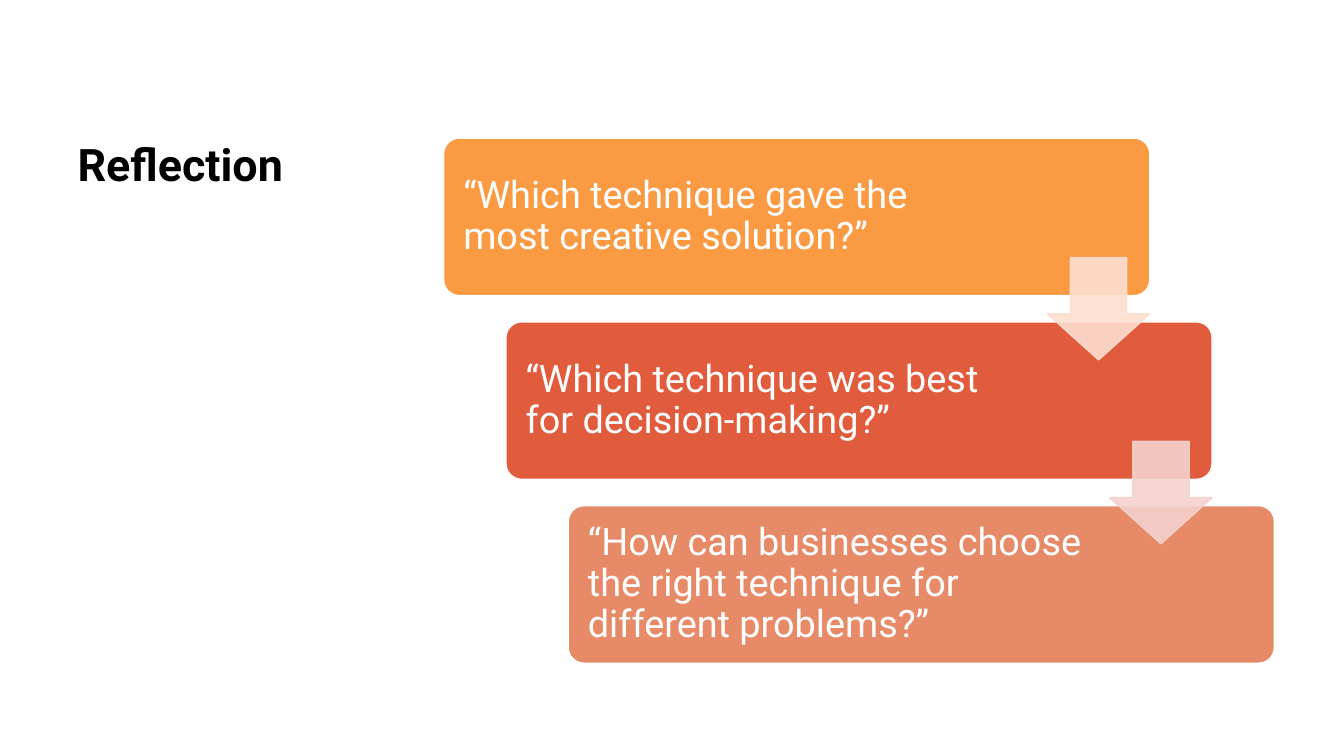
from lxml.etree import SubElement
from pptx import Presentation
from pptx.dml.color import RGBColor
from pptx.enum.shapes import MSO_SHAPE as Shape
from pptx.enum.text import MSO_ANCHOR as Anchor, MSO_AUTO_SIZE as AutoSize, PP_ALIGN as Align
from pptx.oxml.ns import qn
from pptx.util import Inches, Pt

FONT = "Roboto"
BLACK = RGBColor(0x00, 0x00, 0x00)
WHITE = RGBColor(0xFF, 0xFF, 0xFF)
ORANGE = RGBColor(0xFA, 0x9A, 0x42)
RED = RGBColor(0xE1, 0x5C, 0x3D)
SALMON = RGBColor(0xE7, 0x8A, 0x67)
PEACH = RGBColor(0xFD, 0xDE, 0xCF)
PINK = RGBColor(0xF4, 0xD2, 0xCE)

QUESTIONS = [
    ("“Which technique gave the most creative solution?”", ORANGE),
    ("“Which technique was best for decision-making?”", RED),
    ("“How can businesses choose the right technique for different problems?”", SALMON),
]
ARROW_COLORS = [PEACH, PINK]

# Shares of the staircase box
CARD_WIDTH, CARD_HEIGHT = 0.85, 0.3
STEPS = len(QUESTIONS) - 1
STEP_X, STEP_Y = (1 - CARD_WIDTH) / STEPS, (1 - CARD_HEIGHT) / STEPS
ARROW_SIZE = 0.65  # share of a card's height


def set_font(paragraph, size, color, bold=False):
    font = paragraph.font
    font.name, font.size, font.bold = FONT, Pt(size), bold
    font.color.rgb = color
    paragraph.line_spacing = 0.9


def add_block(slide, kind, box, adjustments, fill, line):
    block = slide.shapes.add_shape(kind, *(Inches(length) for length in box))
    block.shadow.inherit = False
    for index, value in enumerate(adjustments):
        block.adjustments[index] = value
    block.fill.solid()
    block.fill.fore_color.rgb = fill
    block.line.color.rgb = line
    block.line.width = Pt(1)
    return block


def place_title(slide, text, box):
    title = slide.shapes.title
    title.left, title.top, title.width, title.height = (Inches(length) for length in box)
    frame = title.text_frame
    frame.text = text
    frame.auto_size = AutoSize.NONE
    frame.vertical_anchor = Anchor.TOP
    heading = frame.paragraphs[0]
    heading.alignment = Align.LEFT
    set_font(heading, 32, BLACK, bold=True)


def add_card(slide, question, color, box):
    card = add_block(slide, Shape.ROUNDED_RECTANGLE, box, [0.1], color, WHITE)
    frame = card.text_frame
    frame.word_wrap = True
    frame.vertical_anchor = Anchor.MIDDLE
    frame.margin_left = Inches(0.15)
    frame.margin_right = Inches(box[2] / 4)  # room for the arrow
    frame.margin_top = frame.margin_bottom = Inches(0.15)
    frame.text = question
    frame.paragraphs[0].alignment = Align.LEFT
    set_font(frame.paragraphs[0], 27, WHITE)


def add_arrow(slide, color, box):
    arrow = add_block(slide, Shape.DOWN_ARROW, box, [0.55, 0.45], color, color)
    # Slight transparency of fill and outline
    for tint in arrow.fill._xPr.iter(qn("a:srgbClr")):
        SubElement(tint, qn("a:alpha"), val="90000")


def add_staircase(slide, box):
    left, top, width, height = box
    card_width, card_height = width * CARD_WIDTH, height * CARD_HEIGHT
    corners = [(left + step * width * STEP_X, top + step * height * STEP_Y)
               for step in range(len(QUESTIONS))]
    for (question, color), corner in zip(QUESTIONS, corners):
        add_card(slide, question, color, (*corner, card_width, card_height))

    # Each arrow is centred on the gap below its card, flush with the card's right side
    size = card_height * ARROW_SIZE
    gap_middle = (card_height + height * STEP_Y) / 2
    for color, (x, y) in zip(ARROW_COLORS, corners):
        add_arrow(slide, color, (x + card_width - size, y + gap_middle - size / 2, size, size))


def main():
    deck = Presentation()
    deck.slide_width, deck.slide_height = Inches(13.33), Inches(7.5)
    slide = deck.slides.add_slide(deck.slide_layouts[5])
    top, height = 1.37, 5.21
    place_title(slide, "Reflection", (0.67, top, 3.18, height))
    add_staircase(slide, (4.4, top, 8.24, height))
    deck.save("out.pptx")


if __name__ == "__main__":
    main()
